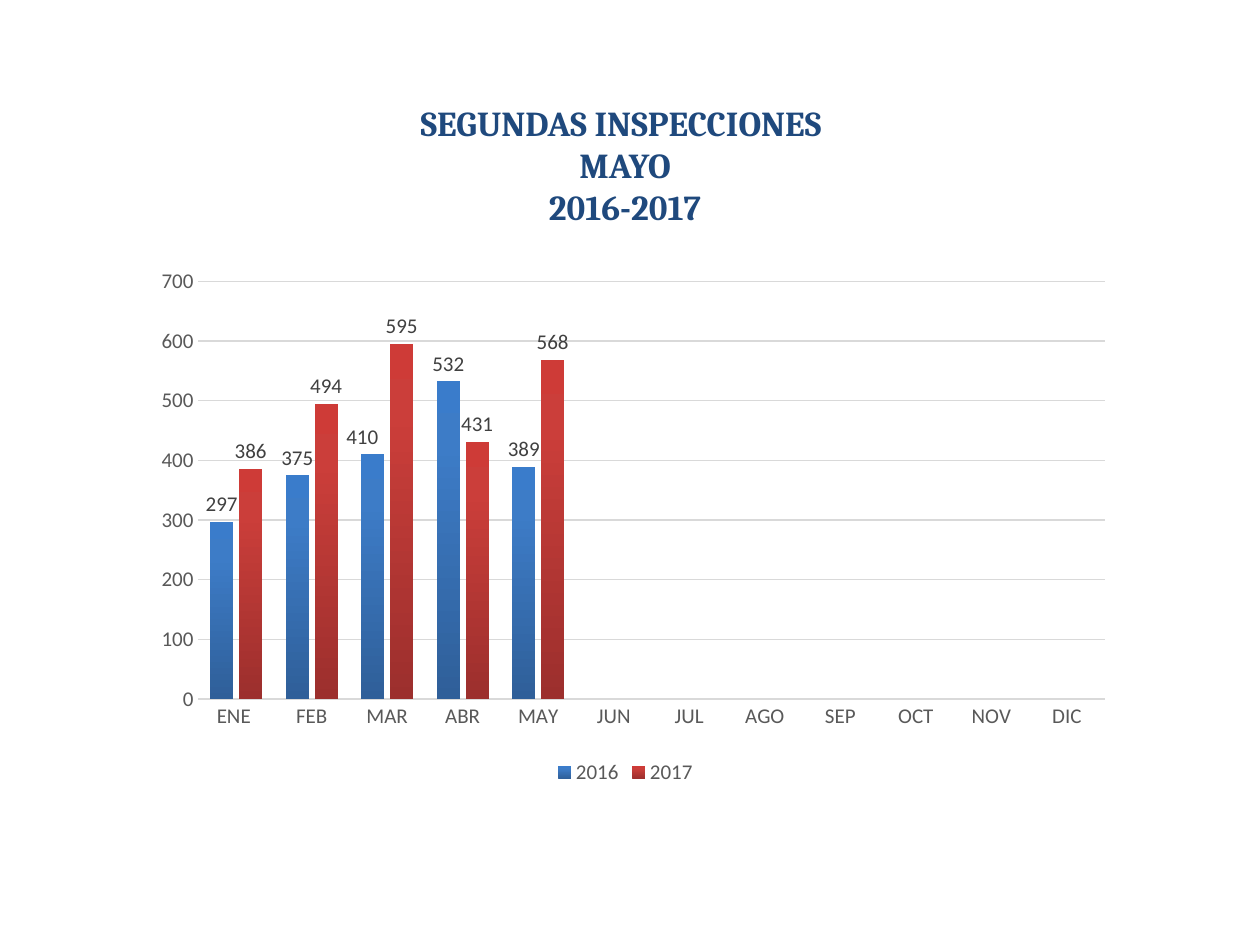
from dataclasses import dataclass

from lxml import etree
from pptx import Presentation
from pptx import util as u
from pptx.chart.data import CategoryChartData
from pptx.dml.color import RGBColor
from pptx.enum import chart as ch, text
from pptx.oxml import parse_xml
from pptx.oxml.ns import nsdecls, qn


@dataclass(frozen=True)
class Theme:
    title_font: str = "Cambria"
    chart_font: str = "Calibri"
    title_size: int = 20
    chart_size: int = 12
    title: str = "1F497D"
    axis_text: str = "595959"
    label_text: str = "404040"
    rule: str = "D9D9D9"
    blue: tuple = ((0, "2F5F99"), (80, "3D7CC7"), (100, "3A7CCB"))
    red: tuple = ((0, "9C2F2D"), (80, "CB3E3A"), (100, "CE3B37"))


THEME = Theme()
TITLE = ("SEGUNDAS INSPECCIONES ", "MAYO", "2016-2017")
MONTHS = ("ENE ", "FEB", "MAR", "ABR", "MAY", "JUN",
          "JUL", "AGO", "SEP", "OCT", "NOV", "DIC")
INSPECTIONS = {
    "2016": (297, 375, 410, 532, 389),
    "2017": (386, 494, 595, 431, 568),
}


def set_font(font, name, size, color, bold=False):
    font.name = name
    font.size = u.Pt(size)
    font.bold = bold
    font.color.rgb = RGBColor.from_string(color)


def set_chart_font(font, color):
    set_font(font, THEME.chart_font, THEME.chart_size, color)


def set_line(line, color, width):
    line.color.rgb = RGBColor.from_string(color)
    line.width = u.Pt(width)


def add_text(page, lines, left, top, width, height, *, font, size, color,
             bold=False, align=text.PP_ALIGN.LEFT):
    box = page.shapes.add_textbox(left, top, width, height)
    frame = box.text_frame
    frame.word_wrap = True
    frame.auto_size = text.MSO_AUTO_SIZE.SHAPE_TO_FIT_TEXT
    for number, line in enumerate(lines):
        para = frame.add_paragraph() if number else frame.paragraphs[0]
        para.alignment = align
        span = para.add_run()
        span.text = line
        set_font(span.font, font, size, color, bold)
    return box


def manual_layout(**settings):
    """Return a c:layout element; settings follow the schema's order."""
    layout = etree.Element(qn("c:layout"))
    manual = etree.SubElement(layout, qn("c:manualLayout"))
    for name, value in settings.items():
        etree.SubElement(manual, qn(f"c:{name}")).set("val", str(value))
    return layout


def fill_upward(series, stops):
    """Fill the bars with a gradient that runs from bottom to top."""
    marks = "".join(
        f'<a:gs pos="{place * 1000}"><a:srgbClr val="{color}"/></a:gs>'
        for place, color in stops)
    gradient = parse_xml(
        f'<a:gradFill {nsdecls("a")} rotWithShape="1"><a:gsLst>{marks}</a:gsLst>'
        '<a:lin ang="16200000" scaled="0"/></a:gradFill>')
    series.format.fill.background()
    blank = series.format.fill._xPr.find(qn("a:noFill"))
    blank.getparent().replace(blank, gradient)


def show_values(series):
    labels = series.data_labels
    labels.show_value = True
    labels.position = ch.XL_LABEL_POSITION.OUTSIDE_END
    set_chart_font(labels.font, THEME.label_text)


def shift_label(series, index, x, y):
    """Move one value label by fractions of the chart's size."""
    label = series.points[index].data_label
    set_chart_font(label.font, THEME.label_text)
    label.position = ch.XL_LABEL_POSITION.OUTSIDE_END
    mark = series._element.find(f".//{qn('c:dLbl')}/{qn('c:idx')}")
    mark.addnext(manual_layout(x=x, y=y))


def place_plot(chart, x, y, w, h):
    area = chart._chartSpace.find(f".//{qn('c:plotArea')}")
    for layout in area.findall(qn("c:layout")):
        area.remove(layout)
    area.insert(0, manual_layout(layoutTarget="inner", xMode="edge",
                                 yMode="edge", x=x, y=y, w=w, h=h))


def style_axes(chart):
    months, values = chart.category_axis, chart.value_axis
    for axis in (months, values):
        axis.major_tick_mark = axis.minor_tick_mark = ch.XL_TICK_MARK.NONE
        set_chart_font(axis.tick_labels.font, THEME.axis_text)
    set_line(months.format.line, THEME.rule, 1)
    values.format.line.fill.background()
    values.minimum_scale, values.maximum_scale = 0, 700
    values.major_unit = 100
    values.has_major_gridlines = True
    set_line(values.major_gridlines.format.line, THEME.rule, 0.75)


def add_inspection_chart(page, left, top, width, height):
    data = CategoryChartData()
    data.categories = MONTHS
    for year, counts in INSPECTIONS.items():
        data.add_series(year, counts + (None,) * (len(MONTHS) - len(counts)))
    chart = page.shapes.add_chart(ch.XL_CHART_TYPE.COLUMN_CLUSTERED,
                                  left, top, width, height, data).chart
    chart.has_title = False
    set_chart_font(chart.font, THEME.axis_text)
    chart.has_legend = True
    chart.legend.position = ch.XL_LEGEND_POSITION.BOTTOM
    chart.legend.include_in_layout = False
    set_chart_font(chart.legend.font, THEME.axis_text)
    style_axes(chart)

    plot = chart.plots[0]
    plot.gap_width, plot.overlap = 100, -24
    plot.vary_by_categories = False
    for series, stops in zip(plot.series, (THEME.blue, THEME.red)):
        fill_upward(series, stops)
        show_values(series)
    shift_label(plot.series[0], MONTHS.index("MAR"), x=-0.01, y=0)
    place_plot(chart, x=0.09, y=0.05, w=0.87, h=0.78)


def main():
    deck = Presentation()
    deck.slide_width, deck.slide_height = u.Cm(25.4), u.Cm(19.05)
    page = deck.slides.add_slide(deck.slide_layouts[6])
    add_text(page, TITLE, u.Cm(3.3), u.Cm(1.93), u.Cm(18.6), u.Cm(2.82),
             font=THEME.title_font, size=THEME.title_size, color=THEME.title,
             bold=True, align=text.PP_ALIGN.CENTER)
    add_inspection_chart(page, u.Cm(2.11), u.Cm(5.13), u.Cm(21), u.Cm(10.8))
    deck.save("out.pptx")


if __name__ == "__main__":
    main()
